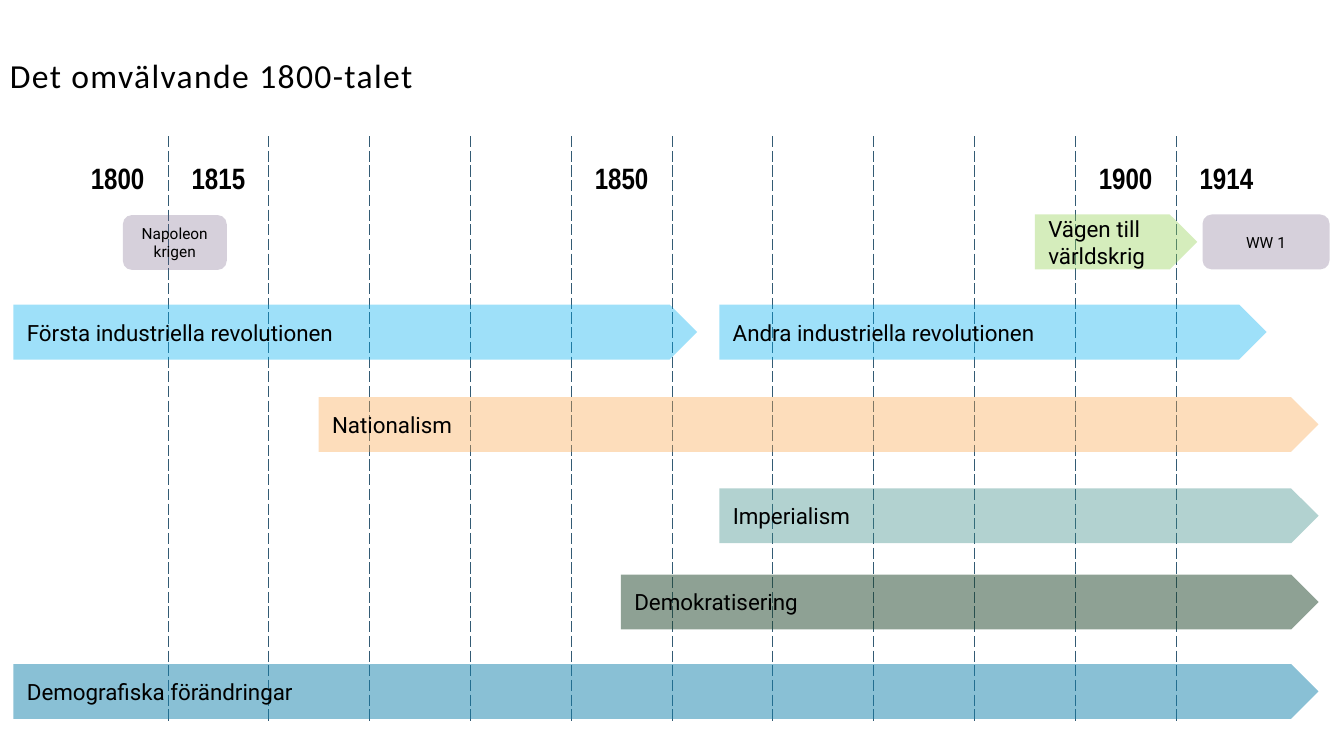
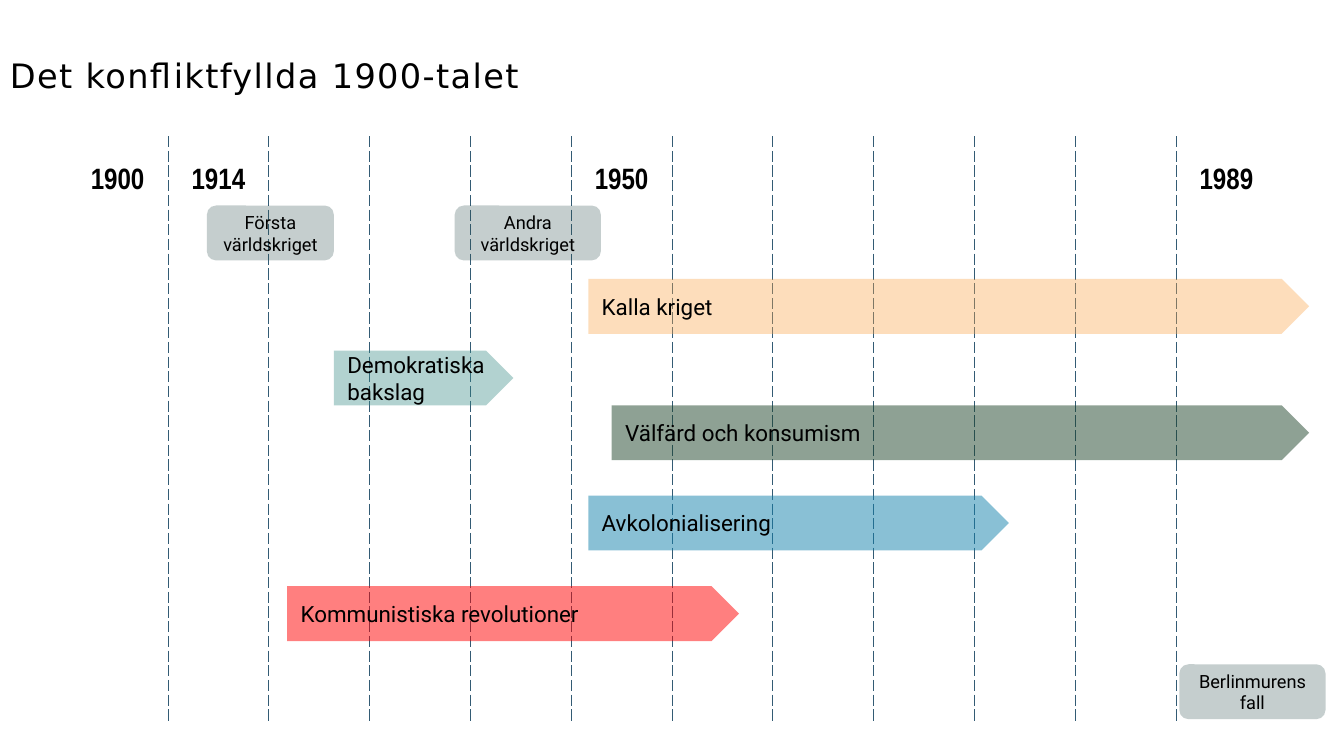
from lxml import etree
from pptx import Presentation
from pptx.dml.color import RGBColor
from pptx.enum import shapes, text
from pptx.oxml import ns
from pptx.util import Pt

BLACK = RGBColor(0x00, 0x00, 0x00)
GRID = RGBColor(0x33, 0x5B, 0x74)
ORANGE = RGBColor(0xFA, 0xA7, 0x4D)
TEAL = RGBColor(0x35, 0x8A, 0x84)
SKY = RGBColor(0x00, 0xB0, 0xF0)
FOREST = RGBColor(0x1F, 0x44, 0x2A)
LIME = RGBColor(0x92, 0xD0, 0x50)
BLUE = RGBColor(0x14, 0x82, 0xAC)
RED = RGBColor(0xFF, 0x00, 0x00)
PURPLE = RGBColor(0x6E, 0x59, 0x81)
SLATE = RGBColor(0x30, 0x52, 0x50)

NO_STYLE_NO_GRID = "{2D5ABB26-0587-4C30-8999-92F81FD0307C}"
COLUMNS = 12
COLUMN_WIDTH = 72
ROW_HEIGHTS = (66.2, 352.8)
INSET = 9.6
ITEM_HEIGHT = 39.2
LEFT, CENTER = text.PP_ALIGN.LEFT, text.PP_ALIGN.CENTER


def write(frame, words, font="Roboto", size=16, bold=False, align=LEFT, spacing=0):
    """Fill a text frame with one paragraph; a newline becomes a line break."""
    para = frame.paragraphs[0]
    para.alignment = align
    for number, line in enumerate(words.split("\n")):
        if number:
            para.add_line_break()
        span = para.add_run()
        span.text = line
        span.font.name = font
        span.font.size = Pt(size)
        span.font.bold = bold
        span.font.color.rgb = BLACK
        if spacing:
            span.font._element.set("spc", str(spacing * 100))


def set_insets(target, inset):
    target.margin_left = target.margin_right = Pt(inset)
    target.margin_top = target.margin_bottom = Pt(inset)


def set_opacity(fill, percent):
    color = fill._xPr.find(".//" + ns.qn("a:srgbClr"))
    etree.SubElement(color, ns.qn("a:alpha"), val=str(percent * 1000))


def dash_edge(cell, side):
    """Give one side (L or R) of a cell a thin dashed border."""
    line = etree.Element(ns.qn(f"a:ln{side}"), w=str(Pt(0.75)))
    solid = etree.SubElement(line, ns.qn("a:solidFill"))
    etree.SubElement(solid, ns.qn("a:srgbClr"), val=str(GRID))
    etree.SubElement(line, ns.qn("a:prstDash"), val="dash")
    cell._tc.get_or_add_tcPr().insert(0, line)


class Timeline:
    """Builds timeline pages in one shared style."""

    def __init__(self):
        self.deck = Presentation()
        self.deck.slide_width, self.deck.slide_height = Pt(960), Pt(540)
        self.page = None

    def new_page(self, title, title_font, years):
        self.page = self.deck.slides.add_slide(self.deck.slide_layouts[6])
        self.year_grid(years)
        self.title(title, title_font)

    def title(self, words, font):
        box = self.page.shapes.add_textbox(Pt(0), Pt(34), Pt(864), Pt(39))
        frame = box.text_frame
        frame.word_wrap = True
        frame.vertical_anchor = text.MSO_ANCHOR.MIDDLE
        write(frame, words, font=font, size=24, spacing=1)

    def year_grid(self, years):
        """Add the dashed column grid; years maps a column number to its label."""
        table = self.page.shapes.add_table(
            len(ROW_HEIGHTS), COLUMNS, Pt(48), Pt(97.2),
            Pt(COLUMNS * COLUMN_WIDTH), Pt(sum(ROW_HEIGHTS))).table
        table.first_row = table.horz_banding = False
        table._tbl.tblPr.find(ns.qn("a:tableStyleId")).text = NO_STYLE_NO_GRID
        for row, height in zip(table.rows, ROW_HEIGHTS):
            row.height = Pt(height)
            for number, cell in enumerate(row.cells):
                cell.fill.background()
                set_insets(cell, INSET)
                cell.vertical_anchor = text.MSO_ANCHOR.MIDDLE
                if number < COLUMNS - 1:
                    dash_edge(cell, "R")
                if number > 0:
                    dash_edge(cell, "L")
        for number, year in years.items():
            write(table.cell(0, number).text_frame, year, font="Arial Narrow",
                  size=21, bold=True, align=CENTER)

    def item(self, kind, words, left, top, width, color, opacity, **style):
        shape = self.page.shapes.add_shape(
            kind, Pt(left), Pt(top), Pt(width), Pt(ITEM_HEIGHT))
        shape.shadow.inherit = False
        shape.line.fill.background()
        shape.fill.solid()
        shape.fill.fore_color.rgb = color
        set_opacity(shape.fill, opacity)
        frame = shape.text_frame
        frame.word_wrap = True
        frame.vertical_anchor = text.MSO_ANCHOR.MIDDLE
        set_insets(frame, INSET)
        write(frame, words, **style)

    def era(self, words, left, top, width, color, opacity=38):
        self.item(shapes.MSO_SHAPE.PENTAGON, words, left, top, width, color, opacity)

    def event(self, words, left, top, width, color, size):
        self.item(shapes.MSO_SHAPE.ROUNDED_RECTANGLE, words, left, top, width,
                  color, 28, size=size, align=CENTER)


def nineteenth_century(timeline):
    timeline.new_page("Det omvälvande 1800-talet", "Calibri",
                      {0: "1800", 1: "1815", 5: "1850", 10: "1900", 11: "1914"})
    timeline.event("Napoleon\nkrigen", 87.8, 153.6, 74.2, PURPLE, 11)
    timeline.event("WW 1", 859, 153.2, 90.7, PURPLE, 11)
    timeline.era("Vägen till världskrig", 739.2, 153.2, 116, LIME)
    timeline.era("Första industriella revolutionen", 9.6, 217.6, 488.4, SKY)
    timeline.era("Andra industriella revolutionen", 513.8, 217.6, 391, SKY)
    timeline.era("Nationalism", 227.6, 283.6, 714.2, ORANGE)
    timeline.era("Imperialism", 513.8, 348.8, 428, TEAL)
    timeline.era("Demokratisering", 443.5, 410.4, 498.3, FOREST, 50)
    timeline.era("Demografiska förändringar", 9.6, 474.3, 932.2, BLUE, 50)


def twentieth_century(timeline):
    timeline.new_page("Det konfliktfyllda 1900-talet", "DejaVu Sans",
                      {0: "1900", 1: "1914", 5: "1950", 11: "1989"})
    timeline.event("Första världskriget", 147.8, 146.8, 90.7, SLATE, 13)
    timeline.event("Andra världskriget", 324.8, 146.8, 104.4, SLATE, 13)
    timeline.event("Berlinmurens fall", 842.4, 474.5, 104.4, SLATE, 13)
    timeline.era("Kalla kriget", 420.2, 199.2, 514.9, ORANGE)
    timeline.era("Demokratiska bakslag", 238.5, 250.4, 128.2, TEAL)
    timeline.era("Välfärd och konsumism", 437, 289.5, 498.1, FOREST, 50)
    timeline.era("Avkolonialisering", 420.2, 354, 300.4, BLUE, 50)
    timeline.era("Kommunistiska revolutioner", 205.2, 418.7, 322.7, RED, 50)


def main():
    timeline = Timeline()
    nineteenth_century(timeline)
    twentieth_century(timeline)
    timeline.deck.save("out.pptx")


if __name__ == "__main__":
    main()
